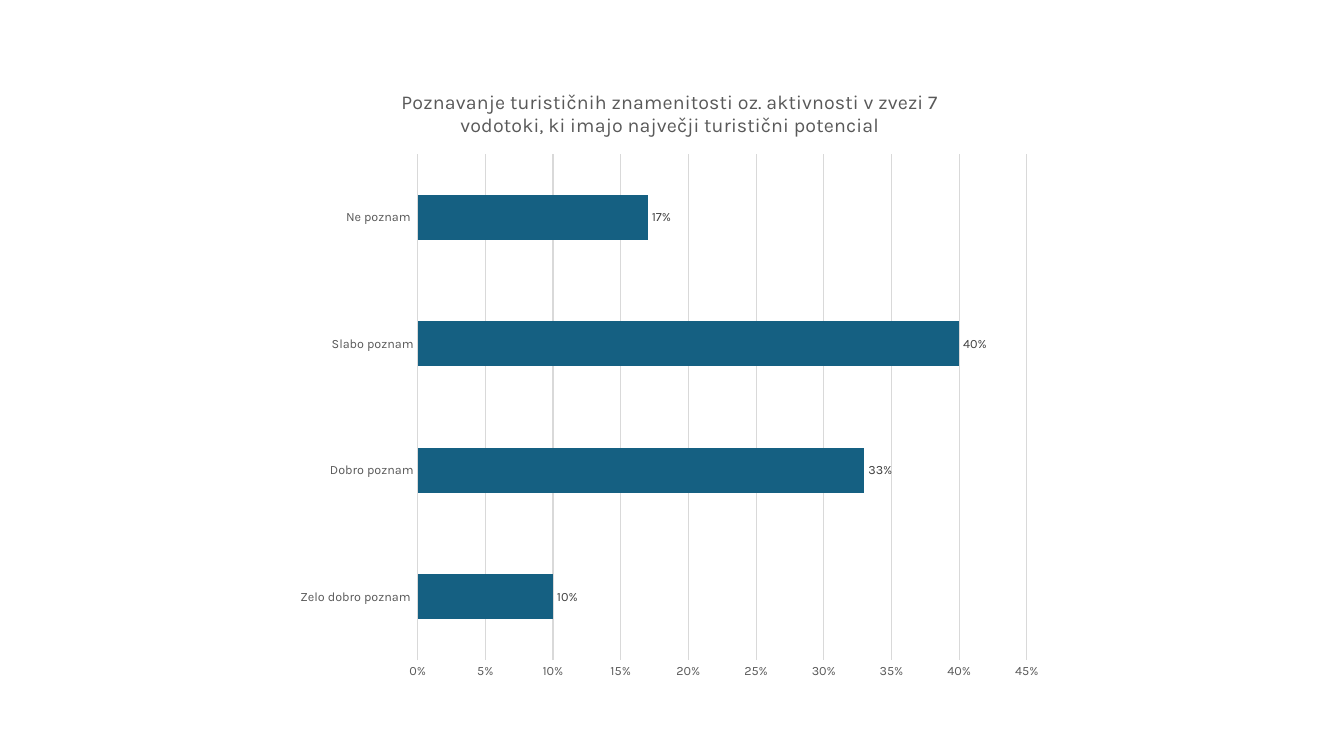
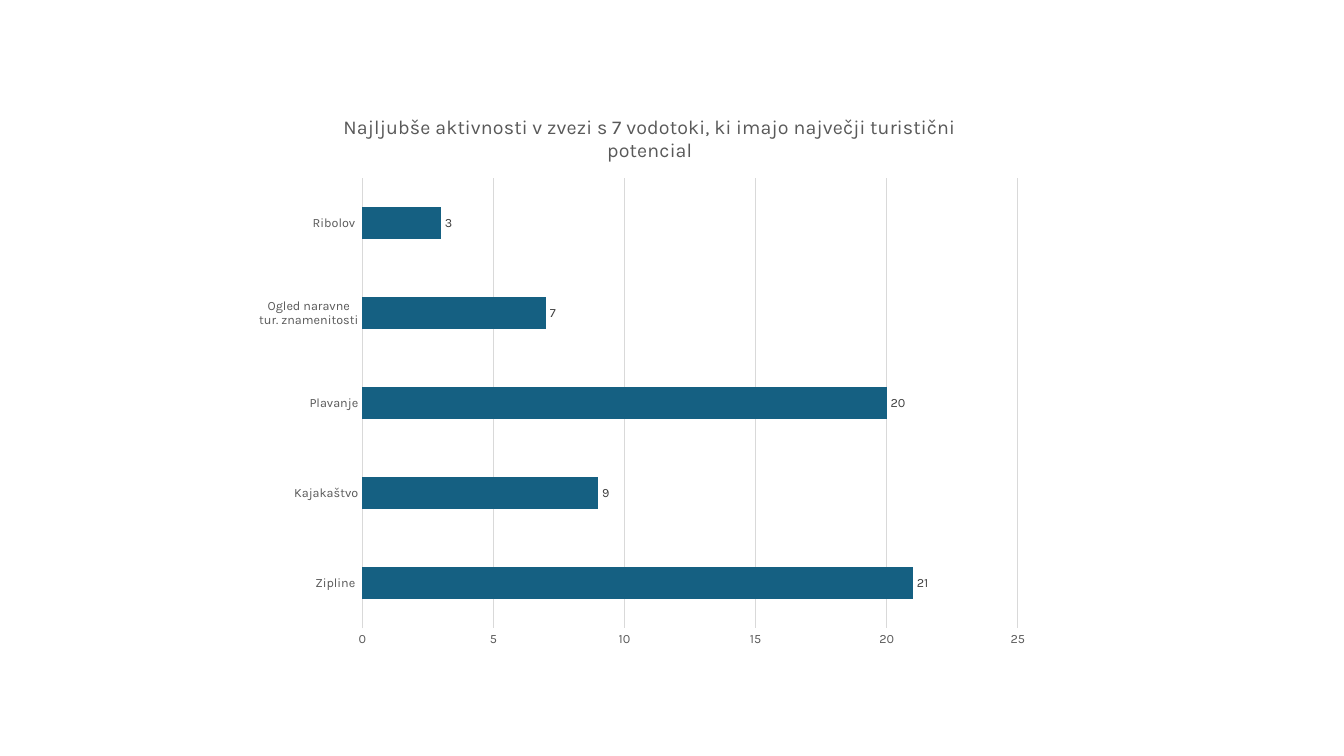
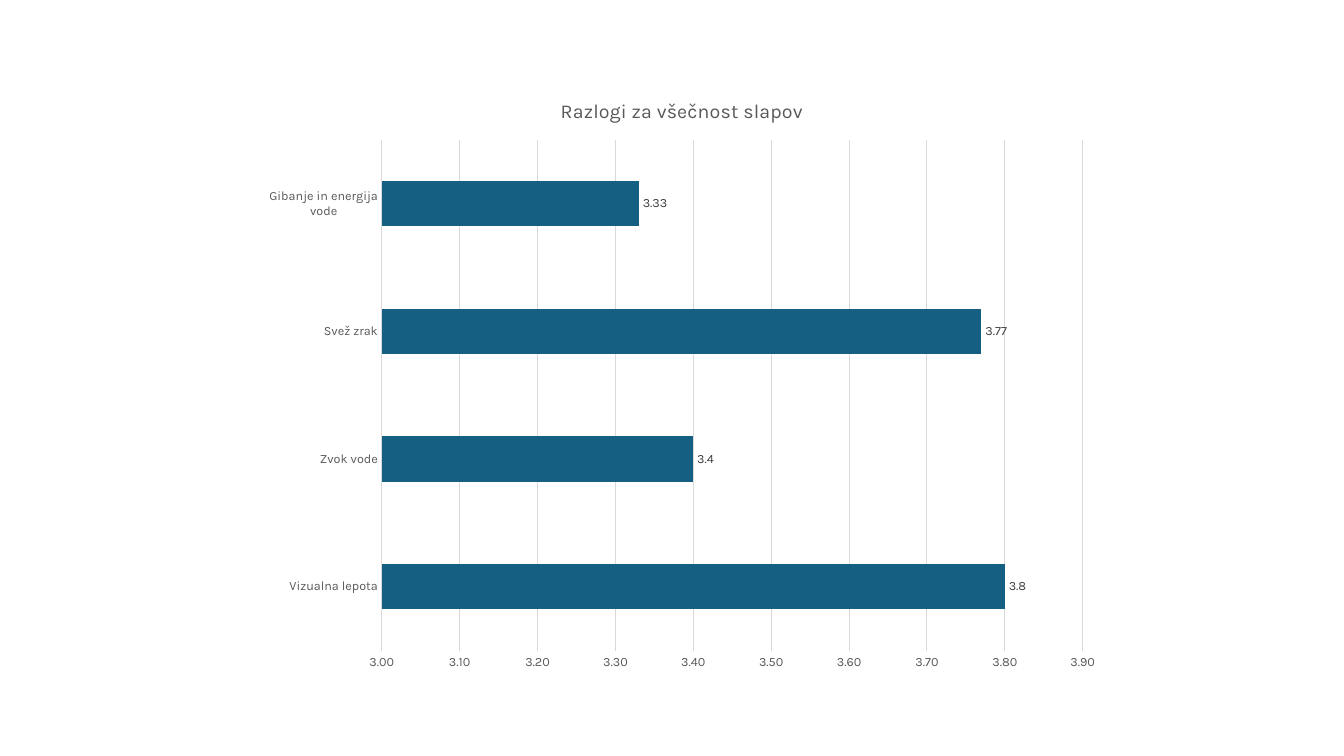
from lxml import etree
from pptx import Presentation
from pptx import util as u
from pptx.chart.data import CategoryChartData
from pptx.dml.color import RGBColor
from pptx.enum import chart as ch
from pptx.oxml.ns import qn

FONT = "Karla"
BAR = RGBColor(0x15, 0x60, 0x82)
GRID = RGBColor(0xD9, 0xD9, 0xD9)
GREY = RGBColor(0x59, 0x59, 0x59)
LABEL = RGBColor(0x40, 0x40, 0x40)
BLACK = RGBColor(0, 0, 0)

# box: left, top, width, height in percent of the slide
# plot: the same in percent of the chart
SURVEY = [
    dict(
        title="Poznavanje turističnih znamenitosti oz. aktivnosti v zvezi 7 "
              "vodotoki, ki imajo največji turistični potencial",
        bars={"Zelo dobro poznam ": 0.1, "Dobro poznam": 0.33,
              "Slabo poznam": 0.4, "Ne poznam ": 0.17},
        box=(21.23, 8.93, 57.24, 82.53), plot=(17.2, 13.9, 79.2, 81.1),
        scale=(0, 0.45, 0.05), axis_format="0%", label_format="0%"),
    dict(
        title="Najljubše aktivnosti v zvezi s 7 vodotoki, ki imajo največji "
              "turistični potencial",
        bars={"Zipline ": 21, "Kajakaštvo": 9, "Plavanje": 20,
              "Ogled naravne tur. znamenitosti": 7, "Ribolov ": 3},
        box=(19.28, 12.4, 58.14, 74.53), plot=(13.2, 15, 83.9, 79.9),
        scale=(0, 25, 5)),
    dict(
        title="Razlogi za všečnost slapov",
        bars={"Vizualna lepota": 3.8, "Zvok vode": 3.4, "Svež zrak": 3.77,
              "Gibanje in energija vode": 3.33},
        box=(18.75, 10.27, 63.99, 79.87), plot=(15.1, 10.3, 81.5, 84.6),
        scale=(3, 3.9, 0.1), axis_format="0.00"),
]


def set_font(font, size, color):
    font.name = FONT
    font.size = u.Pt(size)
    font.bold = False
    font.color.rgb = color


def set_line(line, color):
    line.color.rgb = color
    line.width = u.Pt(0.75)


def set_number_format(target, code):
    target.number_format = code
    target.number_format_is_linked = False


def place_plot(chart, plot):
    """Fix the inner plot area, given in percent of the chart."""
    area = chart._chartSpace.chart.plotArea
    for old in area.findall(qn("c:layout")):
        area.remove(old)
    layout = etree.Element(qn("c:layout"))
    area.insert(0, layout)
    manual = etree.SubElement(layout, qn("c:manualLayout"))
    settings = [("layoutTarget", "inner"), ("xMode", "edge"), ("yMode", "edge")]
    settings += [(key, f"{share / 100:.3f}") for key, share in zip("xywh", plot)]
    for tag, value in settings:
        etree.SubElement(manual, qn(f"c:{tag}")).set("val", value)


def style_title(chart, title):
    chart.has_title = True
    tf = chart.chart_title.text_frame
    tf.text = title
    set_font(tf.paragraphs[0].font, 14, GREY)
    chart.chart_title.include_in_layout = False


def style_axes(chart, scale, number_format):
    for axis in (chart.category_axis, chart.value_axis):
        axis.major_tick_mark = axis.minor_tick_mark = ch.XL_TICK_MARK.NONE
        set_font(axis.tick_labels.font, 9, GREY)
    set_line(chart.category_axis.format.line, GRID)
    chart.category_axis.has_major_gridlines = False
    values = chart.value_axis
    values.format.line.fill.background()
    values.has_major_gridlines = True
    set_line(values.major_gridlines.format.line, GRID)
    values.minimum_scale, values.maximum_scale, values.major_unit = scale
    set_number_format(values.tick_labels, number_format)


def style_bars(chart, number_format):
    bars = chart.plots[0]
    bars.gap_width = 182
    bars.vary_by_categories = False
    fill = bars.series[0].format.fill
    fill.solid()
    fill.fore_color.rgb = BAR
    bars.has_data_labels = True
    labels = bars.data_labels
    labels.show_value = True
    labels.position = ch.XL_LABEL_POSITION.OUTSIDE_END
    set_font(labels.font, 9, LABEL)
    set_number_format(labels, number_format)


def add_survey_slide(prs, title, bars, box, plot, scale,
                     axis_format="General", label_format="General"):
    slide = prs.slides.add_slide(prs.slide_layouts[6])
    data = CategoryChartData()
    data.categories = list(bars)
    data.add_series("Series 1", list(bars.values()))
    sides = (prs.slide_width, prs.slide_height) * 2
    frame = [int(side * share / 100) for side, share in zip(sides, box)]
    chart = slide.shapes.add_chart(
        ch.XL_CHART_TYPE.BAR_CLUSTERED, *frame, data).chart
    chart.has_legend = False
    set_font(chart.font, 10, BLACK)
    style_title(chart, title)
    style_axes(chart, scale, axis_format)
    style_bars(chart, label_format)
    place_plot(chart, plot)


def main():
    prs = Presentation()
    prs.slide_width, prs.slide_height = u.Inches(13.33), u.Inches(7.5)
    for question in SURVEY:
        add_survey_slide(prs, **question)
    prs.save("out.pptx")


if __name__ == "__main__":
    main()
